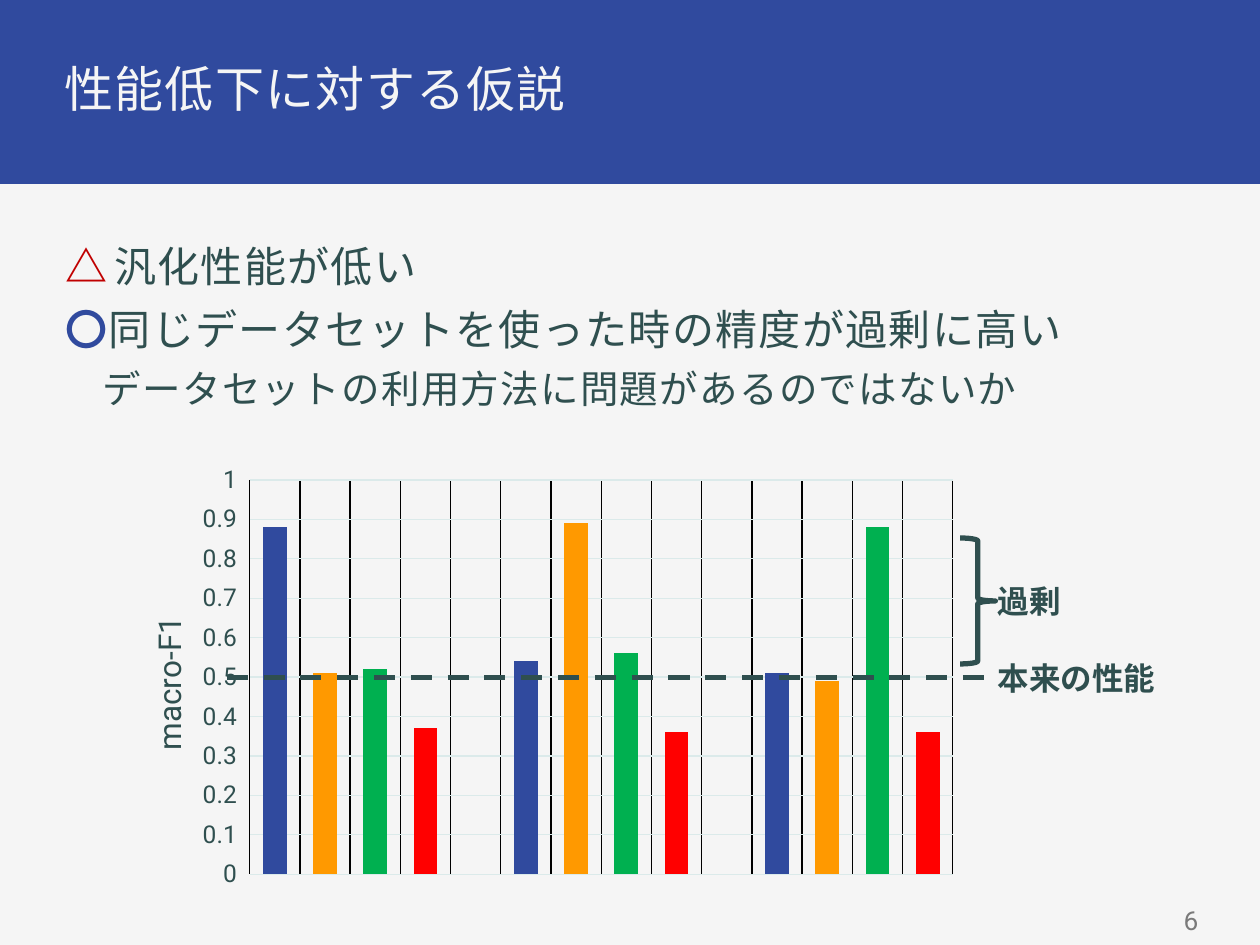
"""Build a slide on a hypothesis for the drop in performance, with a macro-F1 column chart."""
from lxml import etree
from pptx import Presentation
from pptx import util as u
from pptx.chart.data import CategoryChartData
from pptx.dml.color import RGBColor
from pptx.enum import chart as charts, dml, shapes, text
from pptx.oxml import parse_xml
from pptx.oxml.ns import nsdecls, qn

INK, PAPER, BLUE, ORANGE, GREEN, RED = "2F4F4F", "F5F5F5", "304A9E", "FF9900", "00B050", "FF0000"
SCORES = [
    [0.88, 0.51, 0.52, 0.37],
    [0.54, 0.89, 0.56, 0.36],
    [0.51, 0.49, 0.88, 0.36],
]


def rgb(value):
    return RGBColor.from_string(value)


def place(item, left, top, width, height):
    item.left, item.top = u.Inches(left), u.Inches(top)
    item.width, item.height = u.Inches(width), u.Inches(height)


class SlideBuilder:
    font_name = "Roboto"

    def __init__(self, deck):
        self.page = deck.slides.add_slide(deck.slide_layouts[1])
        self.page.background.fill.solid()
        self.page.background.fill.fore_color.rgb = rgb(PAPER)

    def style(self, font, size, color, bold=False):
        font.name, font.size, font.bold = self.font_name, u.Pt(size), bold
        font.color.rgb = rgb(color)

    def set_frame(self, frame, margin, anchor):
        frame.word_wrap = True
        frame.auto_size = text.MSO_AUTO_SIZE.NONE
        frame.vertical_anchor = anchor
        frame.margin_left = frame.margin_right = u.Inches(margin)
        frame.margin_top = frame.margin_bottom = u.Inches(0.06)

    def band(self, left, top, width, height, color):
        box = self.page.shapes.add_shape(
            shapes.MSO_SHAPE.RECTANGLE, *map(u.Inches, (left, top, width, height)))
        box.shadow.inherit = False
        box.fill.solid()
        box.fill.fore_color.rgb = rgb(color)
        box.line.fill.background()
        self.page.shapes._spTree.insert(2, box._element)

    def title(self, words, *area):
        box = self.page.shapes.title
        place(box, *area)
        self.set_frame(box.text_frame, 0.08, text.MSO_ANCHOR.MIDDLE)
        box.text_frame.text = words
        para = box.text_frame.paragraphs[0]
        para.alignment, para.line_spacing = text.PP_ALIGN.LEFT, 0.9
        self.style(para.runs[0].font, 28, PAPER)
        para.runs[0].font._element.set("spc", "80")

    def body(self, items, *area):
        box = self.page.placeholders[1]
        place(box, *area)
        frame = box.text_frame
        self.set_frame(frame, 0.06, text.MSO_ANCHOR.TOP)
        for index, (level, before, spans) in enumerate(items):
            para = frame.add_paragraph() if index else frame.paragraphs[0]
            para.level, para.line_spacing, para.space_before = level, 0.9, u.Pt(before)
            self.bullet(para, 0.3 * level)
            for words, size, color, bold in spans:
                span = para.add_run()
                span.text = words
                self.style(span.font, size, color, bold)
                span.font._element.set("spc", "80")

    def bullet(self, para, indent):
        properties = para._p.get_or_add_pPr()
        properties.set("marL", str(u.Inches(indent)))
        properties.set("indent", "0")
        color = etree.SubElement(properties, qn("a:buClr"))
        etree.SubElement(color, qn("a:srgbClr")).set("val", PAPER)
        etree.SubElement(properties, qn("a:buSzPct")).set("val", "25000")
        etree.SubElement(properties, qn("a:buChar")).set("char", "•")

    def label(self, words, area, size, color, bold=False, align=text.PP_ALIGN.LEFT):
        box = self.page.shapes.add_textbox(*map(u.Inches, area))
        self.set_frame(box.text_frame, 0.1 if bold else 0.06, text.MSO_ANCHOR.MIDDLE)
        box.text_frame.text = words
        para = box.text_frame.paragraphs[0]
        para.alignment = align
        self.style(para.runs[0].font, size, color, bold)

    def outline(self, item):
        item.line.color.rgb = rgb(INK)
        item.line.width = u.Pt(3)

    def dashed_line(self, left, right, height):
        line = self.page.shapes.add_connector(
            shapes.MSO_CONNECTOR.STRAIGHT, *map(u.Inches, (left, height, right, height)))
        self.outline(line)
        line.line.dash_style = dml.MSO_LINE.DASH
        etree.SubElement(line._element.spPr, qn("a:effectLst"))

    def brace(self, *area):
        brace = self.page.shapes.add_shape(shapes.MSO_SHAPE.RIGHT_BRACE, *map(u.Inches, area))
        brace.shadow.inherit = False
        brace.fill.background()
        self.outline(brace)

    def layout(self, inner="", **shares):
        values = "".join(f'<c:{key} val="{value}"/>' for key, value in shares.items())
        return parse_xml(
            f'<c:layout {nsdecls("c")}><c:manualLayout>{inner}<c:xMode val="edge"/>'
            f'<c:yMode val="edge"/>{values}</c:manualLayout></c:layout>')

    def columns(self, groups, colors, *area):
        values = [value for group in groups for value in [*group, None]][:-1]
        data = CategoryChartData()
        data.categories = [str(number + 1) for number in range(len(values))]
        data.add_series("Series 1", values)
        chart = self.page.shapes.add_chart(
            charts.XL_CHART_TYPE.COLUMN_CLUSTERED, *map(u.Inches, area), data).chart
        chart.has_legend = chart.has_title = False
        self.style(chart.font, 10, INK)
        plot = chart.plots[0]
        plot.vary_by_categories, plot.gap_width, plot.overlap = False, 112, -27
        for index, value in enumerate(values):
            if value is not None:
                fill = plot.series[0].points[index].format.fill
                fill.solid()
                fill.fore_color.rgb = rgb(colors[index % (len(colors) + 1)])

        side = chart.category_axis
        side.visible = False
        side.major_gridlines.format.line.color.rgb = rgb("000000")
        side.major_gridlines.format.line.width = u.Pt(0.75)
        skip = etree.Element(qn("c:tickMarkSkip"))
        skip.set("val", str(len(values)))
        side._element.find(qn("c:noMultiLvlLbl")).addprevious(skip)

        scale = chart.value_axis
        scale.minimum_scale, scale.maximum_scale, scale.major_unit = 0, 1, 0.1
        scale.format.line.fill.background()
        scale.major_gridlines.format.line.color.rgb = rgb("DBEAEA")
        scale.major_gridlines.format.line.width = u.Pt(0.75)
        self.style(scale.tick_labels.font, 14, INK)
        title = scale.axis_title
        title.text_frame.text = "macro-F1"
        self.style(title.text_frame.paragraphs[0].runs[0].font, 18, INK)
        for old in title._element.findall(qn("c:layout")):
            title._element.remove(old)
        title._element.find(qn("c:tx")).addnext(self.layout(x=0.04, y=0.35))
        plot_area = chart._chartSpace.chart.plotArea
        for old in plot_area.findall(qn("c:layout")):
            plot_area.remove(old)
        plot_area.insert(0, self.layout(
            '<c:layoutTarget val="inner"/>', x=0.164, y=0.054, w=0.816, h=0.892))


def main():
    deck = Presentation()
    deck.slide_width, deck.slide_height = u.Inches(10), u.Inches(7.5)
    slide = SlideBuilder(deck)
    slide.band(-0.02, -0.02, 10.04, 1.48, BLUE)
    slide.title("性能低下に対する仮説", 0.43, 0.43, 9.13, 0.59)
    slide.body([
        (0, 10.5, [("△", 24, "C00000", True), (" ", 10.5, "C00000", False),
                   ("汎化性能が低い", 24, INK, False)]),
        (0, 10.5, [("〇", 24, BLUE, True),
                   ("同じデータセットを使った時の精度が過剰に高い", 24, INK, False)]),
        (1, 9, [("データセットの利用方法に問題があるのではないか", 22, INK, False)]),
    ], 0.43, 1.89, 9.13, 5.18)
    slide.columns(SCORES, [BLUE, ORANGE, GREEN, RED], 0.86, 3.62, 6.84, 3.51)
    slide.dashed_line(1.8, 7.82, 5.38)
    slide.label("本来の性能", (7.82, 5.18, 1.48, 0.4), 18, INK, True)
    slide.brace(7.62, 4.27, 0.28, 1)
    slide.label("過剰", (7.82, 4.57, 1.48, 0.4), 18, INK, True)
    slide.label("6", (7.32, 7.11, 2.25, 0.39), 15, "7A7A7A", align=text.PP_ALIGN.RIGHT)
    deck.save("out.pptx")


if __name__ == "__main__":
    main()
